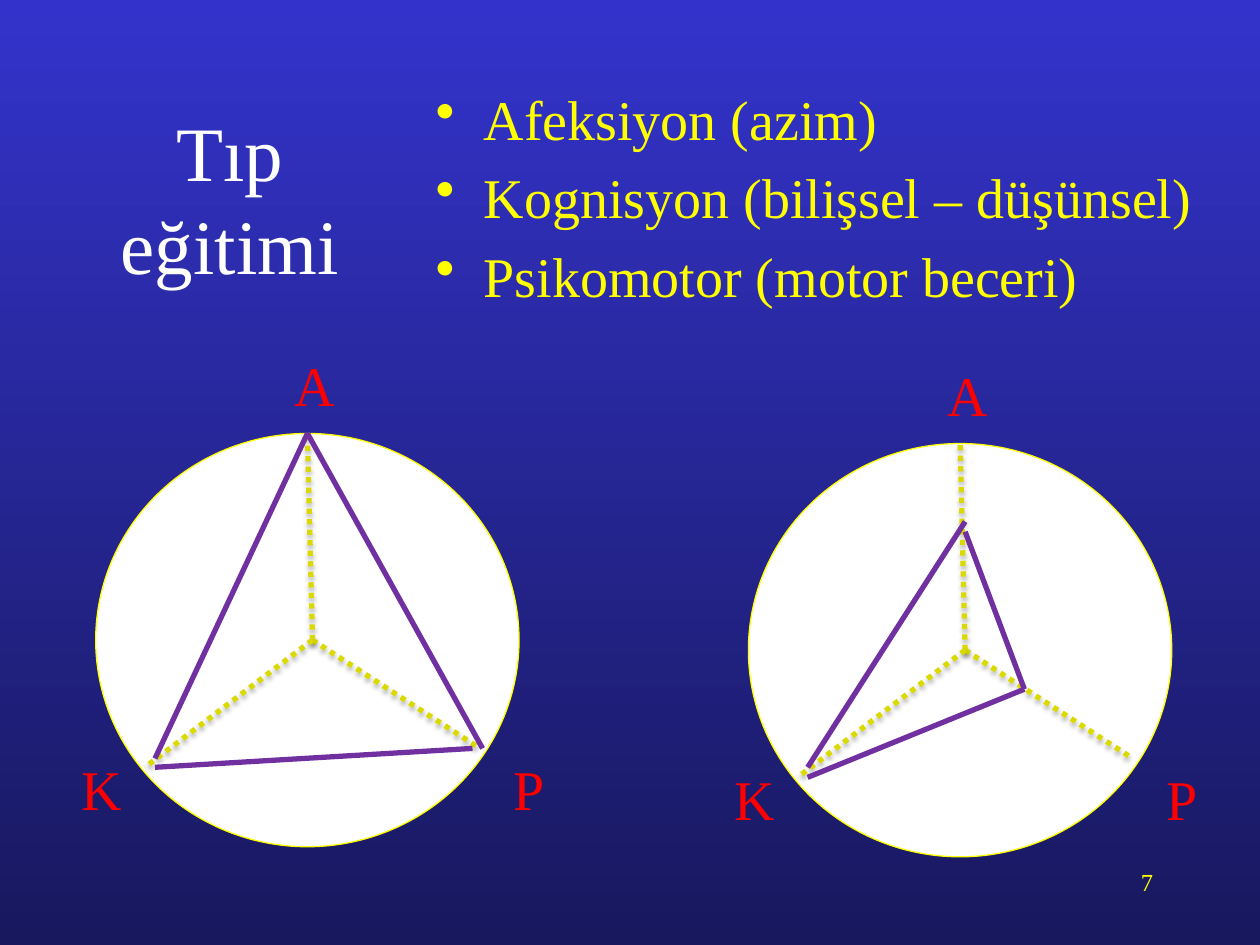
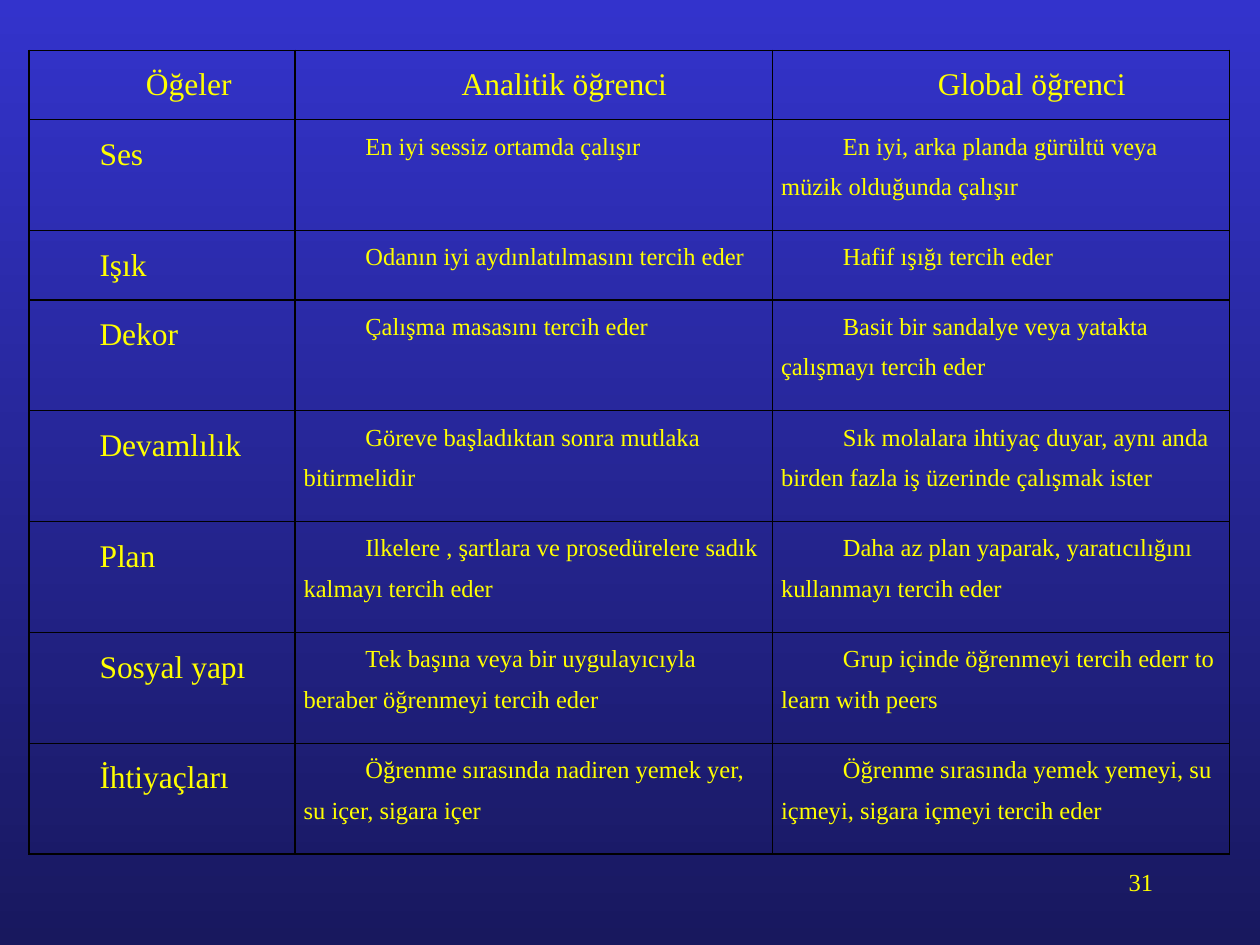
from lxml import etree
from pptx import Presentation
from pptx.dml.color import RGBColor
from pptx.enum.dml import MSO_LINE
from pptx.enum.shapes import MSO_CONNECTOR as CONNECTOR, MSO_SHAPE as SHAPE
from pptx.enum.text import MSO_ANCHOR as ANCHOR, MSO_AUTO_SIZE as AUTO_SIZE, PP_ALIGN as ALIGN
from pptx.oxml import parse_xml
from pptx.oxml.ns import nsdecls, qn
from pptx.util import Inches, Pt

COLORS = {
    "top": "3333CC", "bottom": "18185E", "title": "FFFFFF", "text": "FFFF00",
    "label": "FF0000", "disc": "FFFFFF", "spoke": "DADA00",
    "profile": "7030A0", "grid": "000000",
}
FONT = "Times New Roman"

DOMAINS = ["Afeksiyon (azim)", "Kognisyon (bilişsel – düşünsel)",
           "Psikomotor (motor beceri)"]

# Wheel geometry, measured from the top left corner of the disc
DISC_SIZE = (3.36, 3.28)
HUB = (1.72, 1.64)
RIM_POINTS = [(1.68, 0), (3.05, 2.5), (0.39, 2.65)]
AXIS_LABELS = {"A": (1.48, -0.71, 0.53), "P": (3.22, 2.5, 0.45),
               "K": (-0.21, 2.5, 0.53)}
BALANCED = [((1.68, 0), (0.47, 2.58)), ((1.68, 0), (3.07, 2.5)),
            ((2.99, 2.5), (0.47, 2.65))]
UNBALANCED = [((1.72, 0.62), (0.47, 2.57)), ((1.72, 0.7), (2.19, 1.95)),
              ((2.19, 1.95), (0.47, 2.65))]

COLUMN_WIDTHS = [2.11, 3.79, 3.63]
SHORT_ROW, TALL_ROW = 0.55, 0.88
SHORT_ROWS = (0, 2)
LEARNERS = [
    ("Öğeler ", "Analitik öğrenci", "Global öğrenci"),
    ("Ses", "En iyi sessiz ortamda çalışır",
     "En iyi, arka planda gürültü veya müzik olduğunda çalışır"),
    ("Işık", "Odanın iyi aydınlatılmasını tercih eder", "Hafif ışığı tercih eder"),
    ("Dekor", "Çalışma masasını tercih eder",
     "Basit bir sandalye veya yatakta çalışmayı tercih eder"),
    ("Devamlılık ", "Göreve başladıktan sonra mutlaka bitirmelidir",
     "Sık molalara ihtiyaç duyar, aynı anda birden fazla iş üzerinde çalışmak ister"),
    ("Plan", "Ilkelere , şartlara ve prosedürelere sadık kalmayı tercih eder",
     "Daha az plan yaparak, yaratıcılığını kullanmayı tercih eder"),
    ("Sosyal yapı", "Tek başına veya bir uygulayıcıyla beraber öğrenmeyi tercih eder",
     "Grup içinde öğrenmeyi tercih ederr to learn with peers"),
    ("İhtiyaçları", "Öğrenme sırasında nadiren yemek yer, su içer, sigara içer",
     "Öğrenme sırasında yemek yemeyi, su içmeyi, sigara içmeyi tercih eder"),
]


def rgb(name):
    return RGBColor.from_string(COLORS[name])


def shifted(origin, point):
    return origin[0] + point[0], origin[1] + point[1]


class Deck:
    def __init__(self):
        self.prs = Presentation()
        self.prs.slide_width, self.prs.slide_height = Inches(10), Inches(7.5)
        self.slide = None

    def new_slide(self, number):
        """Start a slide with the shared gradient and its page number."""
        self.slide = self.prs.slides.add_slide(self.prs.slide_layouts[6])
        fill = self.slide.background.fill
        fill.gradient()
        fill.gradient_angle = 270
        for stop, name, position in zip(fill.gradient_stops, ("top", "bottom"), (0, 1)):
            stop.color.rgb = rgb(name)
            stop.position = position
        self.text(number, (7.17, 6.83, 2.08, 0.5), 14, align=ALIGN.RIGHT)

    def style(self, paragraph, size, color="text", align=None):
        paragraph.alignment = align
        for run in paragraph.runs:
            run.font.name, run.font.size = FONT, Pt(size)
            run.font.color.rgb = rgb(color)

    def text(self, words, box, size, color="text", align=None,
             anchor=ANCHOR.TOP, wrap=True):
        frame = self.slide.shapes.add_textbox(*map(Inches, box)).text_frame
        frame.text = words
        frame.word_wrap = wrap
        frame.vertical_anchor = anchor
        if not wrap:
            frame.auto_size = AUTO_SIZE.SHAPE_TO_FIT_TEXT
        for paragraph in frame.paragraphs:
            self.style(paragraph, size, color, align)
        return frame

    def bullets(self, items, box, size):
        frame = self.text("\n".join(items), box, size)
        for paragraph in frame.paragraphs:
            props = paragraph._p.get_or_add_pPr()
            props.set("marL", str(Inches(0.38)))
            props.set("indent", str(Inches(-0.38)))
            before = etree.SubElement(props, qn("a:spcBef"))
            etree.SubElement(before, qn("a:spcPct"), val="20000")
            etree.SubElement(props, qn("a:buChar"), char="•")

    def line(self, start, end, color, dotted=False):
        """Draw a 3 pt line; a dotted one also casts a soft shadow."""
        line = self.slide.shapes.add_connector(
            CONNECTOR.STRAIGHT, *map(Inches, (*start, *end)))
        line.line.color.rgb = rgb(color)
        line.line.width = Pt(3)
        effects = etree.SubElement(line._element.spPr, qn("a:effectLst"))
        if dotted:
            line.line.dash_style = MSO_LINE.ROUND_DOT
            shadow = etree.SubElement(
                effects, qn("a:outerShdw"), blurRad=str(Pt(3.1)),
                dist=str(Pt(1.8)), dir="5400000", rotWithShape="0")
            black = etree.SubElement(shadow, qn("a:srgbClr"), val="000000")
            etree.SubElement(black, qn("a:alpha"), val="35000")

    def wheel(self, origin, profile):
        """Draw a disc with three labelled axes and a learner profile."""
        disc = self.slide.shapes.add_shape(
            SHAPE.OVAL, *map(Inches, (*origin, *DISC_SIZE)))
        disc.shadow.inherit = False
        disc.fill.solid()
        disc.fill.fore_color.rgb = rgb("disc")
        disc.line.color.rgb = rgb("text")
        disc.line.width = Pt(0.75)
        for letter, (x, y, width) in AXIS_LABELS.items():
            self.text(letter, (*shifted(origin, (x, y)), width, 0.64), 32,
                      "label", wrap=False)
        for rim in RIM_POINTS:
            self.line(shifted(origin, HUB), shifted(origin, rim), "spoke", dotted=True)
        for start, end in profile:
            self.line(shifted(origin, start), shifted(origin, end), "profile")

    def cell(self, cell, words, size, align):
        cell.margin_left = cell.margin_right = Inches(0.07)
        cell.margin_top = cell.margin_bottom = 0
        cell.text_frame.text = words
        paragraph = cell.text_frame.paragraphs[0]
        self.style(paragraph, size, align=align)
        paragraph.line_spacing = 1.5
        paragraph.space_before = paragraph.space_after = Pt(6)
        paragraph._p.get_or_add_pPr().set("indent", str(Inches(0.49)))
        props = cell._tc.get_or_add_tcPr()
        for side in "LRTB":
            props.append(parse_xml(
                f'<a:ln{side} {nsdecls("a")} w="{Pt(1)}"><a:solidFill>'
                f'<a:srgbClr val="{COLORS["grid"]}"/></a:solidFill></a:ln{side}>'))
        cell.fill.background()

    def table(self, rows, left, top):
        heights = [SHORT_ROW if i in SHORT_ROWS else TALL_ROW for i in range(len(rows))]
        box = (left, top, sum(COLUMN_WIDTHS), sum(heights))
        table = self.slide.shapes.add_table(
            len(rows), len(COLUMN_WIDTHS), *map(Inches, box)).table
        table.first_row = table.horz_banding = False
        for column, width in zip(table.columns, COLUMN_WIDTHS):
            column.width = Inches(width)
        for r, (row, height) in enumerate(zip(rows, heights)):
            table.rows[r].height = Inches(height)
            for c, words in enumerate(row):
                heading = r == 0 or c == 0
                self.cell(table.cell(r, c), words, 18 if heading else 14,
                          ALIGN.CENTER if r == 0 else ALIGN.LEFT)


def main():
    deck = Deck()

    deck.new_slide("7")
    deck.text("Tıp eğitimi", (0.52, 0.94, 2.61, 1.25), 44, "title",
              ALIGN.CENTER, ANCHOR.MIDDLE)
    deck.bullets(DOMAINS, (3.36, 0.62, 6.28, 2.13), 32)
    deck.wheel((5.94, 3.52), UNBALANCED)
    deck.wheel((0.76, 3.44), BALANCED)

    deck.new_slide("31")
    deck.table(LEARNERS, 0.23, 0.4)

    deck.prs.save("out.pptx")


if __name__ == "__main__":
    main()
